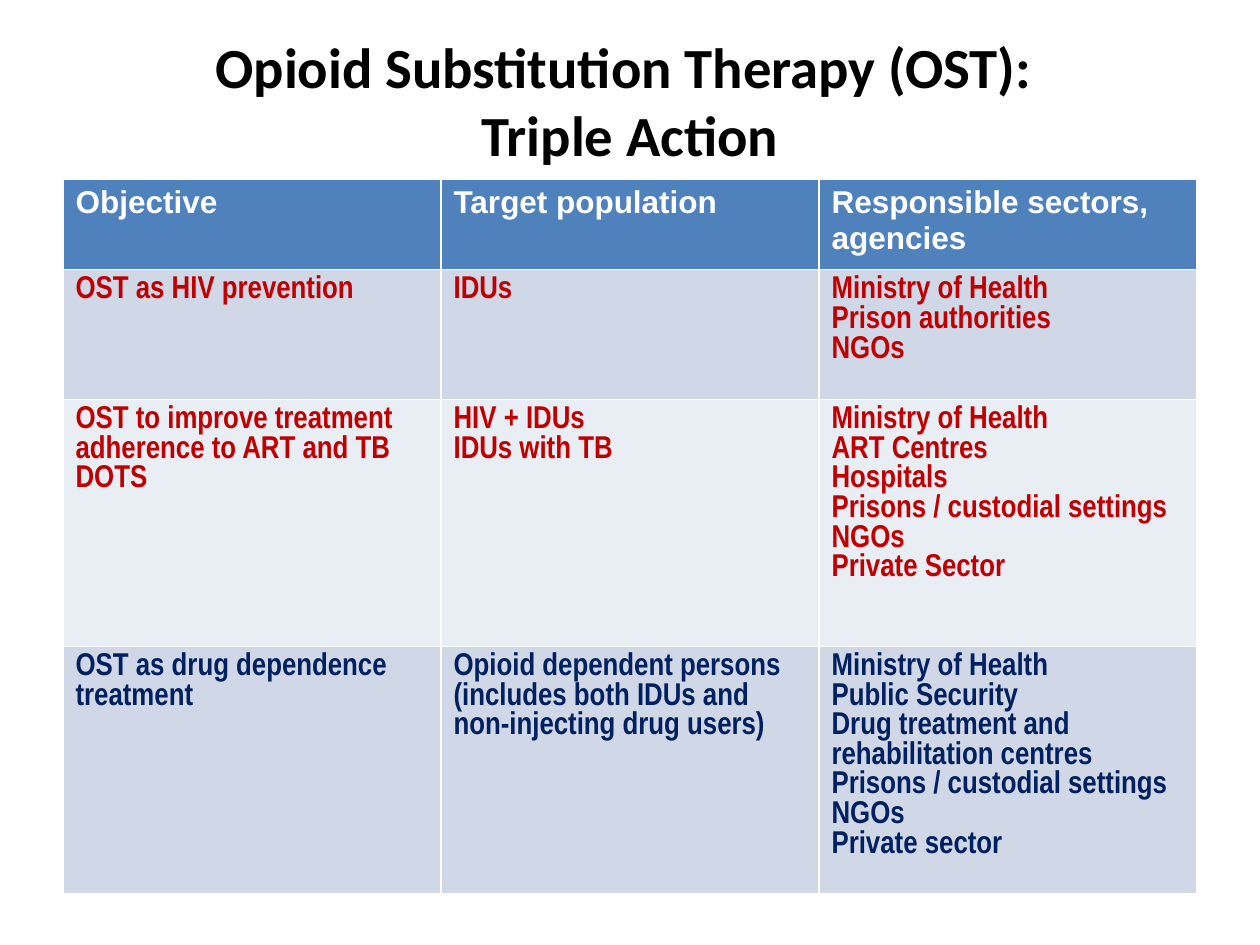
from copy import deepcopy
from dataclasses import dataclass

from pptx import Presentation, util as u
from pptx.dml.color import RGBColor
from pptx.enum import text as t

# Content
TITLE = "Opioid Substitution Therapy (OST): \vTriple Action"
HEADINGS = ["Objective", "Target population", "Responsible sectors, agencies"]
OBJECTIVES = [
    (["OST as HIV prevention"],
     ["IDUs"],
     ["Ministry of Health", "Prison authorities", "NGOs"]),
    (["OST to improve treatment adherence to ART and TB DOTS"],
     ["HIV + IDUs", "IDUs with TB"],
     ["Ministry of Health", "ART Centres", "Hospitals",
      "Prisons / custodial settings", "NGOs", "Private Sector"]),
    (["OST as drug dependence treatment"],
     ["Opioid dependent persons (includes both IDUs and "
      "non-injecting drug users)"],
     ["Ministry of Health", "Public Security",
      "Drug treatment and rehabilitation centres",
      "Prisons / custodial settings", "NGOs", "Private sector"]),
]


@dataclass(frozen=True)
class Theme:
    title_font: str = "Calibri"
    heading_font: str = "Arial"
    body_font: str = "Arial Narrow"
    title_size: float = 32.4
    table_size: float = 18
    black: str = "000000"
    white: str = "FFFFFF"
    header: str = "4F81BD"
    bands: tuple = ("D0D8E8", "E9EDF4")
    row_inks: tuple = ("C00000", "C00000", "002060")


THEME = Theme()

# Layout in inches
WIDTH, HEIGHT = 10, 7.5
MARGIN = WIDTH * 0.05
TITLE_TOP, TITLE_HEIGHT = 0.17, 1.25
TABLE_TOP = TITLE_TOP + TITLE_HEIGHT
TABLE_WIDTH = WIDTH - 2 * MARGIN
ROW_HEIGHTS = [0.72, 1.03, 1.96, 1.96]


def write(frame, lines, *, font, size, color, align=t.PP_ALIGN.LEFT):
    """Fill a text frame with one bold paragraph per line."""
    for i, line in enumerate(lines):
        paragraph = frame.paragraphs[0] if i == 0 else frame.add_paragraph()
        paragraph.text = line
        paragraph.alignment = align
        for run in paragraph.runs:
            run.font.name, run.font.size = font, u.Pt(size)
            run.font.bold = True
            run.font.color.rgb = RGBColor.from_string(color)
        # Line breaks take the size of the text around them
        for line_break in paragraph._p.findall("{*}br"):
            line_break.insert(0, deepcopy(paragraph.runs[0]._r.rPr))


def fill_cell(cell, lines, fill, **style):
    cell.fill.solid()
    cell.fill.fore_color.rgb = RGBColor.from_string(fill)
    write(cell.text_frame, lines, size=THEME.table_size, **style)


def add_title(slide):
    title = slide.shapes.title
    title.left, title.top = u.Inches(MARGIN), u.Inches(TITLE_TOP)
    title.width, title.height = u.Inches(TABLE_WIDTH), u.Inches(TITLE_HEIGHT)
    title.text_frame.auto_size = t.MSO_AUTO_SIZE.NONE
    title.text_frame.vertical_anchor = t.MSO_ANCHOR.MIDDLE
    write(title.text_frame, [TITLE], font=THEME.title_font,
          size=THEME.title_size, color=THEME.black, align=t.PP_ALIGN.CENTER)


def add_objectives(slide):
    # The default table style supplies the white rules between cells
    table = slide.shapes.add_table(
        len(ROW_HEIGHTS), len(HEADINGS), u.Inches(MARGIN), u.Inches(TABLE_TOP),
        u.Inches(TABLE_WIDTH), u.Inches(sum(ROW_HEIGHTS))).table
    for row, height in zip(table.rows, ROW_HEIGHTS):
        row.height = u.Inches(height)

    for col, heading in enumerate(HEADINGS):
        fill_cell(table.cell(0, col), [heading], THEME.header,
                  font=THEME.heading_font, color=THEME.white)
    for r, (objective, ink) in enumerate(zip(OBJECTIVES, THEME.row_inks)):
        for col, lines in enumerate(objective):
            fill_cell(table.cell(r + 1, col), lines, THEME.bands[r % 2],
                      font=THEME.body_font, color=ink)


def main():
    deck = Presentation()
    deck.slide_width, deck.slide_height = u.Inches(WIDTH), u.Inches(HEIGHT)
    slide = deck.slides.add_slide(deck.slide_layouts.get_by_name("Title Only"))
    add_title(slide)
    add_objectives(slide)
    deck.save("out.pptx")


if __name__ == "__main__":
    main()
